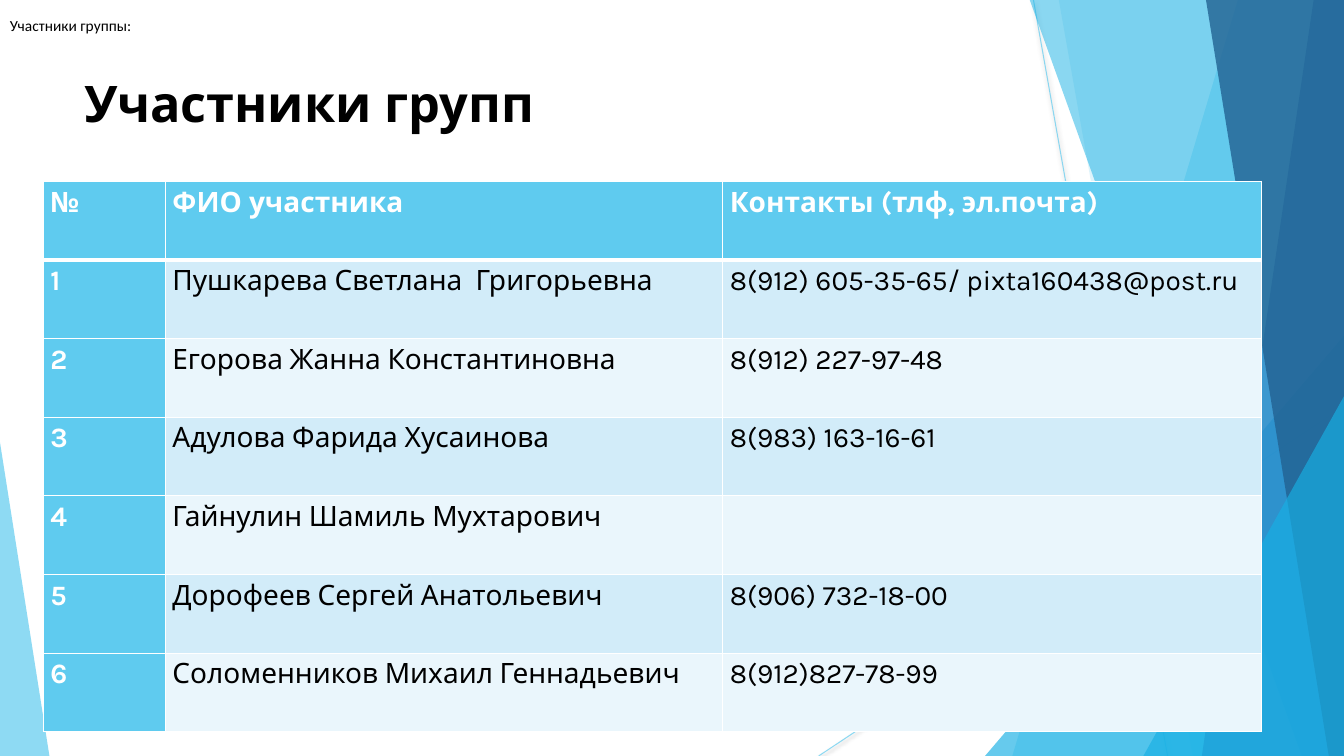
from lxml import etree
from pptx import Presentation
from pptx import util as u
from pptx.dml.color import RGBColor
from pptx.enum import shapes, text
from pptx.oxml import parse_xml
from pptx.oxml.ns import nsdecls, qn

WIDTH, HEIGHT = 13.33, 7.5
SKY, CYAN, BLUE, NAVY = "5FCBEF", "17B0E4", "2E83C3", "226292"
BLACK, WHITE = "000000", "FFFFFF"
BANDS = ["EAF6FC", "D2ECF9"]
COLUMNS = [1.21, 5.53, 5.34]
ROW_HEIGHT = 0.78
HEADER = ["№", "ФИО участника", "Контакты (тлф, эл.почта)"]
MEMBERS = [
    ("Пушкарева Светлана  Григорьевна", "8(912) 605-35-65/ pixta160438@post.ru"),
    ("Егорова Жанна Константиновна", "8(912) 227-97-48"),
    ("Адулова Фарида Хусаинова", "8(983) 163-16-61"),
    ("Гайнулин Шамиль Мухтарович", ""),
    ("Дорофеев Сергей Анатольевич", "8(906) 732-18-00"),
    ("Соломенников Михаил Геннадьевич", "8(912)827-78-99"),
]


def rgb(color):
    """Turn a hex string into a colour."""
    return RGBColor.from_string(color)


def set_alpha(fill, color, opacity):
    """Make a fill solid with the given opacity in percent."""
    fill.solid()
    fill.fore_color.rgb = rgb(color)
    clr = fill._xPr.find(qn("a:solidFill"))[0]
    etree.SubElement(clr, qn("a:alpha")).set("val", str(opacity * 1000))


def style_font(p, name, size, color, bold=False):
    """Set the font of a paragraph."""
    p.font.name, p.font.size, p.font.bold = name, u.Pt(size), bold
    p.font.color.rgb = rgb(color)


def add_ray(s, x1, y1, x2, y2):
    """Draw a thin translucent line with a soft shadow."""
    ln = s.shapes.add_connector(shapes.MSO_CONNECTOR.STRAIGHT,
                                *[u.Inches(v) for v in (x1, y1, x2, y2)])
    ln.line.width = u.Pt(0.75)
    set_alpha(ln.line.fill, SKY, 70)
    ln._element.spPr.append(parse_xml(
        f'<a:effectLst {nsdecls("a")}><a:outerShdw blurRad="{u.Pt(3.1)}" '
        f'dist="{u.Pt(1.6)}" dir="5400000" rotWithShape="0"><a:srgbClr val="{BLACK}">'
        '<a:alpha val="38000"/></a:srgbClr></a:outerShdw></a:effectLst>'))


def finish_facet(sp, color, opacity):
    """Give a decorative facet its fill and no outline."""
    sp.shadow.inherit = False
    sp.line.fill.background()
    set_alpha(sp.fill, color, opacity)


def add_wedge(s, top_x, bottom_x, color, opacity):
    """Draw a full-height facet from a slanted edge to the right of the slide."""
    top = -0.01
    corners = [(top_x, top), (WIDTH, top), (WIDTH, HEIGHT), (bottom_x, HEIGHT)]
    points = [(u.Inches(x), u.Inches(y)) for x, y in corners]
    fb = s.shapes.build_freeform(*points[0])
    fb.add_line_segments(points[1:], close=True)
    finish_facet(fb.convert_to_shape(), color, opacity)


def add_triangle(s, left, top, width, apex, color, opacity):
    """Draw a triangle standing on the bottom of the slide."""
    sp = s.shapes.add_shape(shapes.MSO_SHAPE.ISOSCELES_TRIANGLE,
                            *[u.Inches(v) for v in (left, top, width, HEIGHT - top)])
    sp.adjustments[0] = apex
    finish_facet(sp, color, opacity)


def add_backdrop(s):
    """Draw the facets at both sides of the slide."""
    add_ray(s, 10.25, 0, 11.58, HEIGHT)
    add_ray(s, WIDTH, 4.03, 8.12, HEIGHT)
    add_wedge(s, 12.28, 10.04, SKY, 36)
    add_wedge(s, 10.5, 11.83, SKY, 20)
    add_triangle(s, 9.77, 3.33, 3.56, 1, CYAN, 66)
    add_wedge(s, 10.21, 12.91, CYAN, 50)
    add_wedge(s, 13.03, 11.92, BLUE, 70)
    add_wedge(s, 11.96, 13.18, NAVY, 80)
    add_triangle(s, 11.34, 3.93, 1.99, 1, CYAN, 66)
    add_triangle(s, 0, 4.39, 0.49, 0, SKY, 70)


def set_title(s, words):
    """Place and format the title."""
    sp = s.shapes.title
    sp.left, sp.top, sp.width, sp.height = [u.Inches(v) for v in (0.74, 0.67, 9.4, 1.44)]
    tf = sp.text_frame
    tf.text = words
    tf.vertical_anchor = text.MSO_ANCHOR.TOP
    p = tf.paragraphs[0]
    p.alignment = text.PP_ALIGN.LEFT
    style_font(p, "Karla", 36, BLACK, True)


def set_borders(cell, bottom):
    """Draw white borders around a cell."""
    sides = {"L": 1, "R": 1, "T": 1, "B": bottom}
    for i, (side, width) in enumerate(sides.items()):
        cell._tc.get_or_add_tcPr().insert(i, parse_xml(
            f'<a:ln{side} {nsdecls("a")} w="{u.Pt(width)}"><a:solidFill>'
            f'<a:srgbClr val="{WHITE}"/></a:solidFill></a:ln{side}>'))


def fill_cell(cell, words, row, col):
    """Write a cell and format it by its place in the table."""
    heading = row == 0 or col == 0
    cell.fill.solid()
    cell.fill.fore_color.rgb = rgb(SKY if heading else BANDS[row % 2])
    set_borders(cell, 3 if row == 0 else 1)
    cell.margin_left = cell.margin_right = u.Inches(0.07)
    cell.margin_top = cell.margin_bottom = 0
    cell.text = words
    p = cell.text_frame.paragraphs[0]
    p.line_spacing = 1.15
    style_font(p, "Karla", 20, WHITE if heading else BLACK, heading)


def add_members(s):
    """Add the table of members."""
    rows = [HEADER] + [(str(i), *m) for i, m in enumerate(MEMBERS, 1)]
    table = s.shapes.add_table(
        len(rows), len(COLUMNS), u.Inches(0.43), u.Inches(1.8),
        u.Inches(sum(COLUMNS)), u.Inches(ROW_HEIGHT * len(rows))).table
    table.first_col = True
    for column, width in zip(table.columns, COLUMNS):
        column.width = u.Inches(width)
    for r, row in enumerate(rows):
        table.rows[r].height = u.Inches(ROW_HEIGHT)
        for c, words in enumerate(row):
            fill_cell(table.cell(r, c), words, r, c)


def add_caption(s, words):
    """Add the small line at the top of the slide."""
    sp = s.shapes.add_textbox(*[u.Inches(v) for v in (0, 0.11, 19.67, 0.29)])
    tf = sp.text_frame
    tf.word_wrap = True
    tf.vertical_anchor = text.MSO_ANCHOR.MIDDLE
    tf.text = words
    style_font(tf.paragraphs[0], "Calibri", 11, BLACK)


def main():
    """Build the slide and save it."""
    prs = Presentation()
    prs.slide_width, prs.slide_height = u.Inches(WIDTH), u.Inches(HEIGHT)
    s = prs.slides.add_slide(prs.slide_layouts[5])
    add_backdrop(s)
    set_title(s, "Участники групп")
    add_members(s)
    add_caption(s, "Участники группы:")
    prs.save("out.pptx")


if __name__ == "__main__":
    main()
